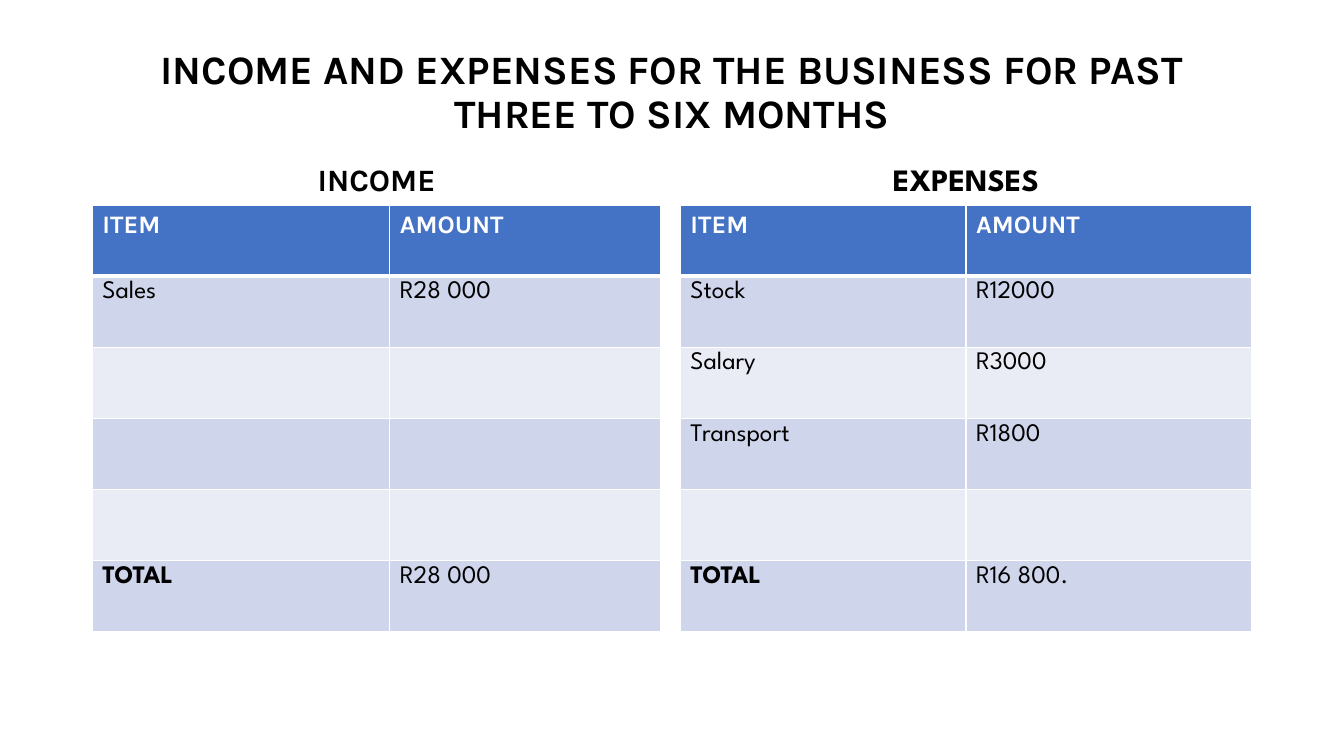
from lxml import etree
from pptx import Presentation
from pptx.dml.color import RGBColor
from pptx.enum.text import MSO_ANCHOR, MSO_AUTO_SIZE, PP_ALIGN
from pptx.oxml.ns import qn
from pptx.util import Pt

CENTER = PP_ALIGN.CENTER
MIDDLE, BOTTOM = MSO_ANCHOR.MIDDLE, MSO_ANCHOR.BOTTOM
NO_FIT = MSO_AUTO_SIZE.NONE

COLORS = {
    "text": "000000",
    "white": "FFFFFF",
    "header": "4472C4",
    "dark_band": "CFD5EA",
    "light_band": "E9EBF5",
}
KARLA, SPARTAN = "Karla", "League Spartan"
COMPARISON_LAYOUT = 4
ROW_HEIGHT = 50.8
TABLE_TOP = 146.4

INCOME = [
    ("ITEM", "AMOUNT"),
    ("Sales", "R28 000"),
    ("", ""),
    ("", ""),
    ("", ""),
    ("TOTAL", "R28 000"),
]
EXPENSES = [
    ("ITEM", "AMOUNT"),
    ("Stock", "R12000"),
    ("Salary", "R3000"),
    ("Transport", "R1800"),
    ("", ""),
    ("TOTAL", "R16 800."),
]


def set_attributes(target, values):
    for name, value in values.items():
        setattr(target, name, value)


def write_text(para, text, font, size, color, bold):
    span = para.add_run()
    span.text = text
    set_attributes(span.font, {"name": font, "size": Pt(size), "bold": bold})
    span.font.color.rgb = RGBColor.from_string(COLORS[color])


def fill_placeholder(box, place, text, font, size, frame_format, line_spacing):
    left, top, width, height = (Pt(value) for value in place)
    set_attributes(box, {"left": left, "top": top, "width": width, "height": height})
    frame = box.text_frame
    set_attributes(frame, {"word_wrap": True, "auto_size": NO_FIT, **frame_format})
    para = frame.paragraphs[0]
    set_attributes(para, {"alignment": CENTER, "line_spacing": line_spacing,
                          "space_before": Pt(0)})
    write_text(para, text, font, size, "text", True)


def add_borders(cell, widths):
    properties = cell._tc.get_or_add_tcPr()
    for side, width in widths.items():
        line = etree.SubElement(properties, qn("a:ln" + side), w=str(Pt(width)))
        fill = etree.SubElement(line, qn("a:solidFill"))
        etree.SubElement(fill, qn("a:srgbClr"), val=COLORS["white"])


def format_cell(cell, text, row):
    # The header has a thick line below it, shared with the first data row
    add_borders(cell, {"L": 1, "R": 1, "T": 3 if row == 1 else 1,
                       "B": 3 if row == 0 else 1})
    band = "header" if row == 0 else "dark_band" if row % 2 else "light_band"
    cell.fill.solid()
    cell.fill.fore_color.rgb = RGBColor.from_string(COLORS[band])
    if not text:
        return
    para = cell.text_frame.paragraphs[0]
    if row == 0:
        write_text(para, text, KARLA, 18, "white", True)
    else:
        write_text(para, text, SPARTAN, 18, "text", text == "TOTAL")


def add_ledger(page, left, column_widths, entries):
    table = page.shapes.add_table(
        len(entries), len(column_widths), Pt(left), Pt(TABLE_TOP),
        Pt(sum(column_widths)), Pt(ROW_HEIGHT * len(entries))).table
    for column, width in zip(table.columns, column_widths):
        column.width = Pt(width)
    for row, entry in enumerate(entries):
        table.rows[row].height = Pt(ROW_HEIGHT)
        for column, text in enumerate(entry):
            format_cell(table.cell(row, column), text, row)


def main():
    deck = Presentation()
    set_attributes(deck, {"slide_width": Pt(960), "slide_height": Pt(540)})
    page = deck.slides.add_slide(deck.slide_layouts[COMPARISON_LAYOUT])
    title, income_head, income_body, expenses_head, expenses_body = (
        list(page.placeholders)[:5])

    # Tables take the place of the content placeholders
    for box in [income_body, expenses_body, *list(page.placeholders)[5:]]:
        box.element.getparent().remove(box.element)

    # Title
    fill_placeholder(
        title, (66, 28.8, 828, 75.6),
        "INCOME AND EXPENSES FOR THE BUSINESS FOR PAST THREE TO SIX MONTHS",
        KARLA, 28.8,
        {"vertical_anchor": MIDDLE, "margin_left": Pt(28), "margin_right": Pt(28)},
        0.9)

    # Headings and their tables
    ledgers = [
        (income_head, "INCOME", KARLA, 66, (212.4, 193.7), INCOME),
        (expenses_head, "EXPENSES", SPARTAN, 486, (204, 204), EXPENSES),
    ]
    for box, heading, font, left, column_widths, entries in ledgers:
        fill_placeholder(
            box, (left, 104.4, sum(column_widths), 59.8), heading, font, 22.2,
            {"vertical_anchor": BOTTOM, "margin_bottom": Pt(23)}, 0.8)
        add_ledger(page, left, column_widths, entries)

    deck.save("out.pptx")


if __name__ == "__main__":
    main()
